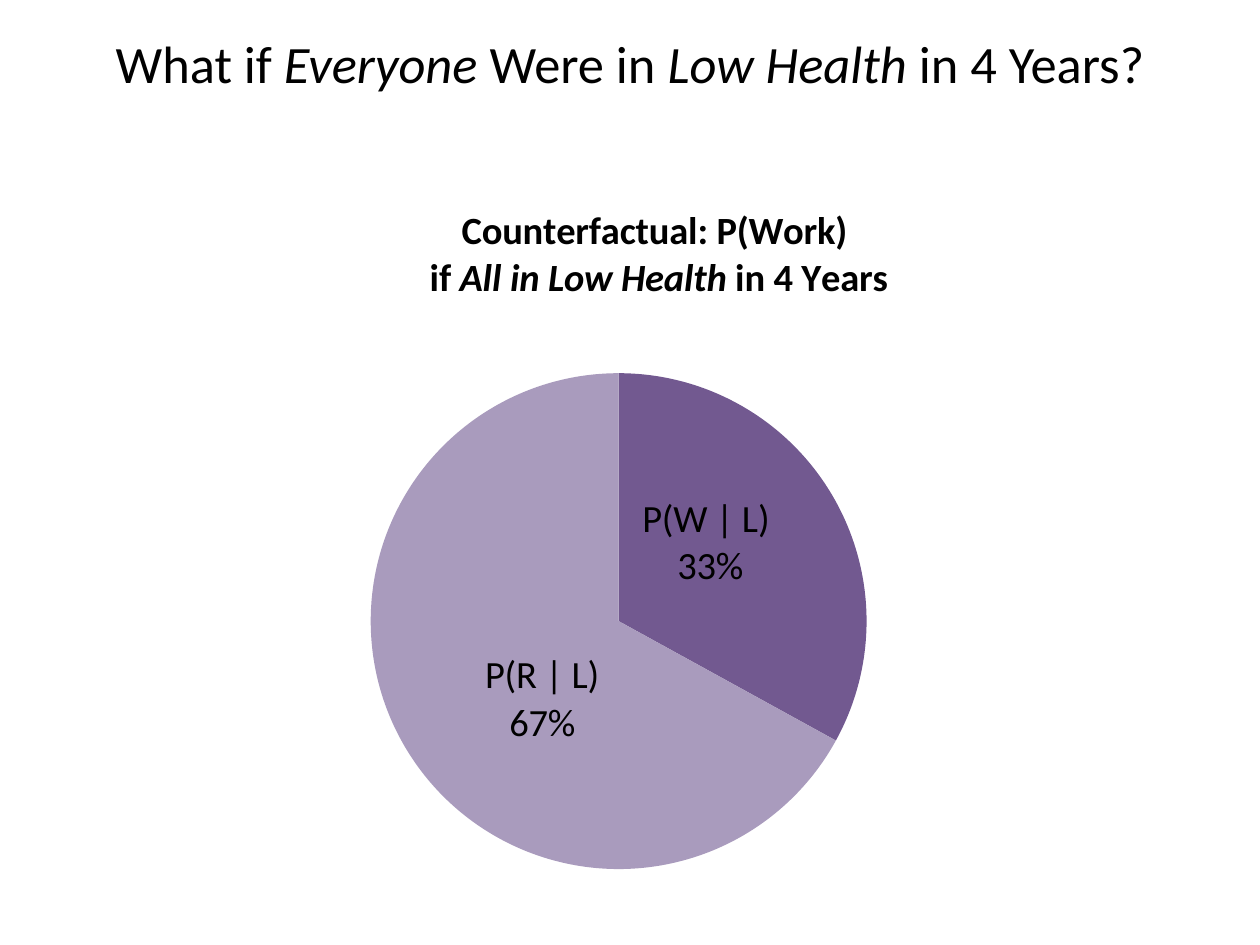
from dataclasses import dataclass

from lxml import etree
from pptx import Presentation
from pptx.chart.data import CategoryChartData
from pptx.dml.color import RGBColor
from pptx.enum.chart import XL_CHART_TYPE, XL_LABEL_POSITION
from pptx.enum.text import MSO_ANCHOR, PP_ALIGN
from pptx.oxml.ns import qn
from pptx.util import Emu, Pt

PIE = XL_CHART_TYPE.PIE
CENTER_LABEL = XL_LABEL_POSITION.CENTER
CENTER = PP_ALIGN.CENTER
MIDDLE = MSO_ANCHOR.MIDDLE
PX = 914400 // 126


@dataclass(frozen=True)
class Theme:
    font: str = "Calibri"
    text: RGBColor = RGBColor(0x00, 0x00, 0x00)
    work: RGBColor = RGBColor(0x72, 0x59, 0x90)
    retire: RGBColor = RGBColor(0xA9, 0x9B, 0xBD)
    title_size: int = 30
    chart_size: int = 22


theme = Theme()


def write_spans(para, spans, *, size, bold=False):
    """Add (text, italic) spans to a centred paragraph."""
    para.alignment = CENTER
    for text, italic in spans:
        span = para.add_run()
        span.text = text
        font = span.font
        font.name, font.size = theme.font, Pt(size)
        font.bold, font.italic = bold, italic
        font.color.rgb = theme.text


def make_layout(**settings):
    """Return a manual chart layout; x, y, w and h are fractions of the chart."""
    layout = etree.Element(qn("c:layout"))
    manual = etree.SubElement(layout, qn("c:manualLayout"))
    for name, value in settings.items():
        etree.SubElement(manual, qn(f"c:{name}")).set("val", str(value))
    return layout


deck = Presentation()
deck.slide_width, deck.slide_height = Emu(1260 * PX), Emu(945 * PX)
page = deck.slides.add_slide(deck.slide_layouts[5])

# Slide title
title = page.shapes.title
title.left, title.top = Emu(0), Emu(0)
title.width, title.height = Emu(1260 * PX), Emu(126 * PX)
title.text_frame.vertical_anchor = MIDDLE
write_spans(
    title.text_frame.paragraphs[0],
    [("What if ", False), ("Everyone", True), (" Were in ", False),
     ("Low Health", True), (" in 4 Years?", False)],
    size=theme.title_size,
)

# Pie chart
data = CategoryChartData(number_format="0")
data.categories = ["P(W | L) ", "P(R | L)"]
data.add_series("Series 1", [33, 67])
chart = page.shapes.add_chart(
    PIE, *(Emu(length * PX) for length in (252, 179, 756, 756)), data
).chart
chart.has_legend = False
chart.font.name, chart.font.size = theme.font, Pt(theme.chart_size)
chart.font.color.rgb = theme.text

# Chart title
chart.has_title = True
heading = chart.chart_title
heading.include_in_layout = False
frame = heading.text_frame
write_spans(frame.paragraphs[0], [("Counterfactual: P(Work) ", False)],
            size=theme.chart_size, bold=True)
write_spans(
    frame.add_paragraph(),
    [("if ", False), ("All in Low Health", True), (" in 4 Years", False)],
    size=theme.chart_size, bold=True,
)
heading_xml = heading._element
for old_layout in heading_xml.findall(qn("c:layout")):
    heading_xml.remove(old_layout)
heading_xml.find(qn("c:tx")).addnext(
    make_layout(xMode="edge", yMode="edge", x=0.23, y=0.03))

# Pie position inside the chart
plot = chart.plots[0]
plot.vary_by_categories = True
plot_area = chart._chartSpace.chart.plotArea
for old_layout in plot_area.findall(qn("c:layout")):
    plot_area.remove(old_layout)
plot_area.insert(0, make_layout(
    layoutTarget="inner", xMode="edge", yMode="edge",
    x=0.157, y=0.257, w=0.656, h=0.656))

# Slice colours and labels
slices = [(theme.work, -0.02, -0.02), (theme.retire, 0.04, 0.02)]
for index, (color, shift_x, shift_y) in enumerate(slices):
    point = plot.series[0].points[index]
    point.format.fill.solid()
    point.format.fill.fore_color.rgb = color
    point.format.line.fill.background()
    label = point.data_label
    label.font.name, label.font.size = theme.font, Pt(theme.chart_size)
    label.font.color.rgb = theme.text
    label.position = CENTER_LABEL
    label_xml = plot.series[0]._element.findall(
        f"{qn('c:dLbls')}/{qn('c:dLbl')}")[index]
    for flag, shown in (("showVal", 0), ("showCatName", 1), ("showPercent", 1)):
        label_xml.find(qn(f"c:{flag}")).set("val", str(shown))
    label_xml.find(qn("c:idx")).addnext(make_layout(x=shift_x, y=shift_y))
    etree.SubElement(label_xml, qn("c:separator")).text = "\n"

deck.save("out.pptx")
